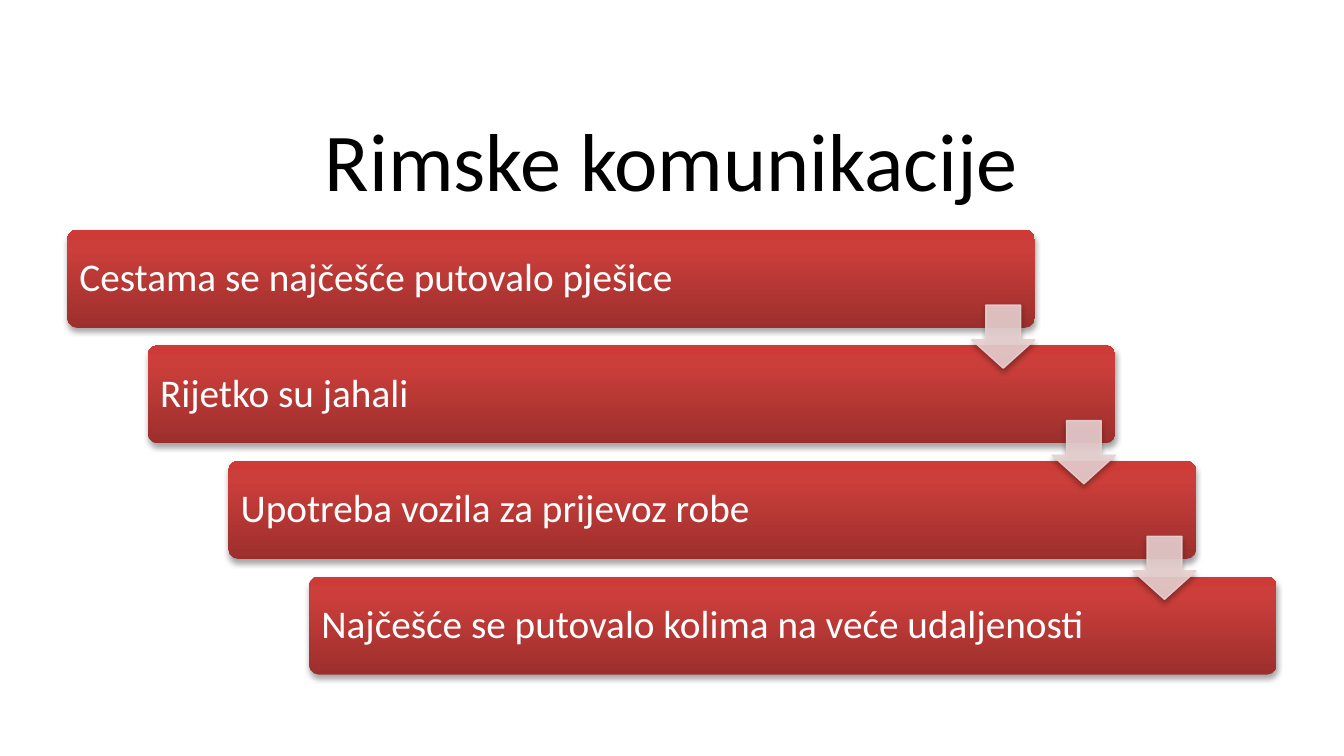
from copy import deepcopy

from lxml.etree import SubElement
from pptx import Presentation
from pptx.dml.color import RGBColor
from pptx.enum.shapes import MSO_SHAPE
from pptx.enum.text import MSO_ANCHOR, PP_ALIGN
from pptx.oxml.ns import qn
from pptx.util import Inches, Pt

TITLE = "Rimske komunikacije"
STEPS = [
    "Cestama se najčešće putovalo pješice",
    "Rijetko su jahali",
    "Upotreba vozila za prijevoz robe",
    "Najčešće se putovalo kolima na veće udaljenosti",
]

BLACK = RGBColor(0x00, 0x00, 0x00)
WHITE = RGBColor(0xFF, 0xFF, 0xFF)
PALE_RED = RGBColor(0xE8, 0xD0, 0xD0)
BAR_STOPS = [
    (0, RGBColor(0x9C, 0x2F, 0x2D)),
    (0.8, RGBColor(0xCB, 0x3E, 0x3A)),
    (1, RGBColor(0xCE, 0x3B, 0x37)),
]

SLIDE_WIDTH = 10
SLIDE_HEIGHT = SLIDE_WIDTH * 9 / 16
MARGIN = 0.05 * SLIDE_WIDTH
CONTENT_WIDTH = SLIDE_WIDTH - 2 * MARGIN
STAIRS_TOP, STAIRS_BOTTOM = 1.71, 5.02
BAR_WIDTH = 0.8 * CONTENT_WIDTH
BAR_HEIGHT = 0.73
ARROW_SIZE = 0.47
STEP_RIGHT = (CONTENT_WIDTH - BAR_WIDTH) / (len(STEPS) - 1)
STEP_DOWN = (STAIRS_BOTTOM - STAIRS_TOP - BAR_HEIGHT) / (len(STEPS) - 1)


def write(frame, text, size, color, align):
    frame.word_wrap = True
    frame.vertical_anchor = MSO_ANCHOR.MIDDLE
    paragraph = frame.paragraphs[0]
    paragraph.text = text
    paragraph.alignment = align
    paragraph.line_spacing = 0.9
    formats = {"name": "Calibri", "size": Pt(size)}
    for attribute, value in formats.items():
        setattr(paragraph.font, attribute, value)
    paragraph.font.color.rgb = color


def add_alpha(parent, percent):
    SubElement(parent, qn("a:alpha"), val=str(percent * 1000))


def add_shadow(shape):
    shape.shadow.inherit = False
    effects = shape._element.spPr.find(qn("a:effectLst"))
    shadow = SubElement(effects, qn("a:outerShdw"), blurRad=str(Pt(3.1)),
                        dist=str(Pt(1.8)), dir="5400000", rotWithShape="0")
    add_alpha(SubElement(shadow, qn("a:srgbClr"), val=str(BLACK)), 35)


def add_bar(slide, left, top, text):
    bar = slide.shapes.add_shape(MSO_SHAPE.ROUNDED_RECTANGLE, Inches(left), Inches(top),
                                 Inches(BAR_WIDTH), Inches(BAR_HEIGHT))
    bar.adjustments[0] = 0.1
    bar.fill.gradient()
    bar.fill.gradient_angle = 90
    stop_list = next(bar._element.spPr.iter(qn("a:gsLst")))
    stop_list.append(deepcopy(stop_list[0]))
    for stop, (position, color) in zip(bar.fill.gradient_stops, BAR_STOPS):
        stop.position = position
        stop.color.rgb = color
    bar.line.fill.background()
    add_shadow(bar)
    for side in ("left", "right", "top", "bottom"):
        setattr(bar.text_frame, f"margin_{side}", Inches(0.07))
    write(bar.text_frame, text, 21, WHITE, PP_ALIGN.LEFT)


def add_arrow(slide, left, top):
    arrow = slide.shapes.add_shape(MSO_SHAPE.DOWN_ARROW, Inches(left), Inches(top),
                                   Inches(ARROW_SIZE), Inches(ARROW_SIZE))
    arrow.adjustments[0] = 0.55
    arrow.adjustments[1] = 0.45
    arrow.line.width = Pt(0.75)
    for fill in (arrow.fill, arrow.line.fill):
        fill.solid()
        fill.fore_color.rgb = PALE_RED
    for color in arrow._element.spPr.iter(qn("a:srgbClr")):
        add_alpha(color, 90)
    add_shadow(arrow)


presentation = Presentation()
presentation.slide_width = Inches(SLIDE_WIDTH)
presentation.slide_height = Inches(SLIDE_HEIGHT)
slide = presentation.slides.add_slide(presentation.slide_layouts[5])

title = slide.shapes.title
title.left, title.top = Inches(MARGIN), Inches(0.84)
title.width, title.height = Inches(CONTENT_WIDTH), Inches(0.78)
write(title.text_frame, TITLE, 44, BLACK, PP_ALIGN.CENTER)

corners = [(MARGIN + i * STEP_RIGHT, STAIRS_TOP + i * STEP_DOWN) for i in range(len(STEPS))]
for (left, top), text in zip(corners, STEPS):
    add_bar(slide, left, top, text)

# Each arrow ends at its bar's right edge and is centred on the gap below the bar.
for left, top in corners[:-1]:
    gap_middle = top + (BAR_HEIGHT + STEP_DOWN) / 2
    add_arrow(slide, left + BAR_WIDTH - ARROW_SIZE, gap_middle - ARROW_SIZE / 2)

presentation.save("out.pptx")
